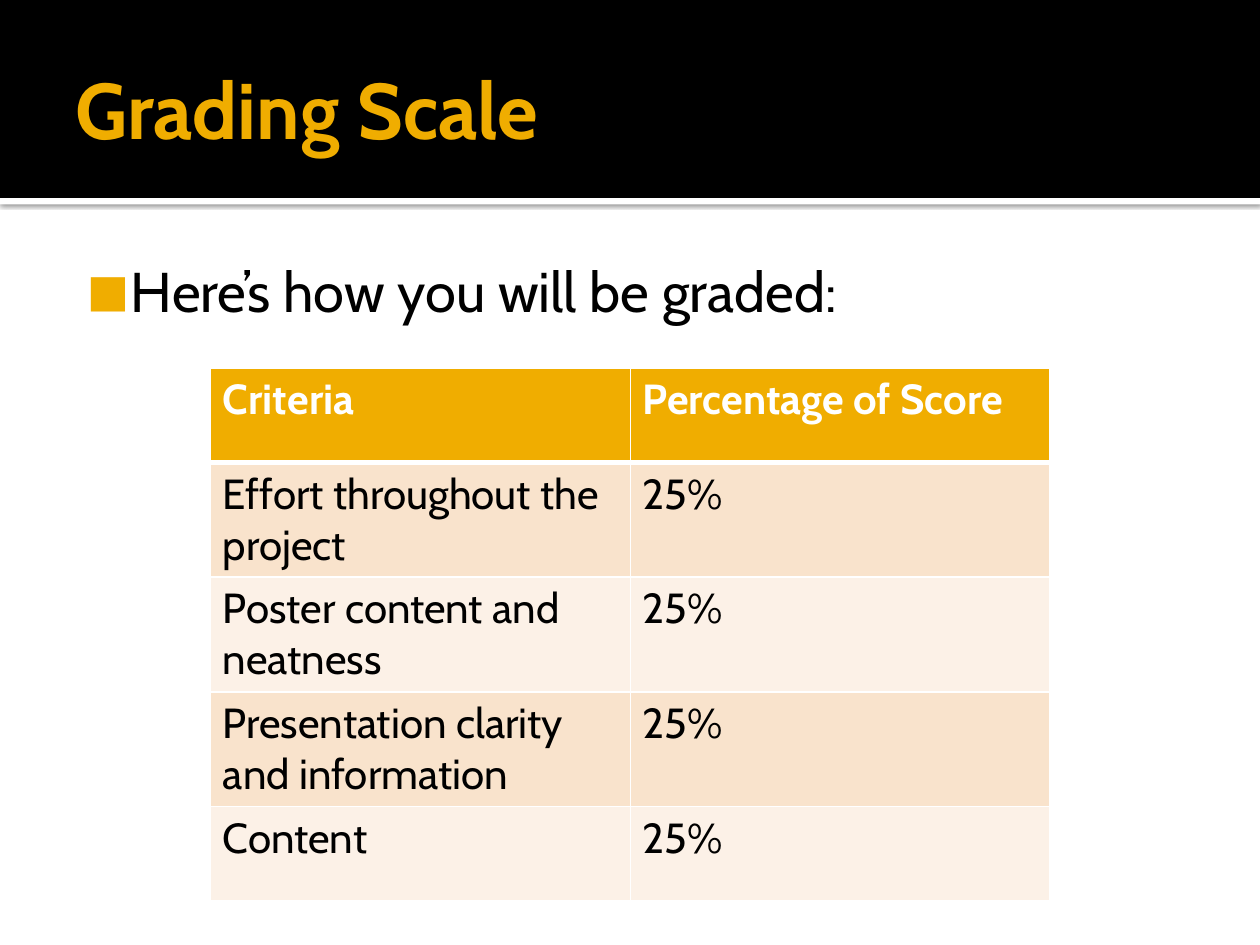
from dataclasses import dataclass

from lxml.etree import SubElement
from pptx import Presentation
from pptx.dml.color import RGBColor
from pptx.enum.shapes import MSO_SHAPE
from pptx.enum.text import MSO_ANCHOR, MSO_AUTO_SIZE, PP_ALIGN
from pptx.oxml import parse_xml
from pptx.oxml.ns import nsdecls, qn
from pptx.util import Cm, Pt


@dataclass(frozen=True)
class Theme:
    font: str = "Cabin"
    gold: str = "F0AD00"
    black: str = "000000"
    white: str = "FFFFFF"
    bands: tuple = ("F9E3CC", "FCF1E7")
    title_size: int = 45
    body_size: int = 32
    table_size: int = 24


theme = Theme()


def style_text(para, size, color, bold=False):
    para.font.name = theme.font
    para.font.size = Pt(size)
    para.font.bold = bold
    para.font.color.rgb = RGBColor.from_string(color)
    para.alignment = PP_ALIGN.LEFT


def add_border(cell, side, width):
    line = SubElement(cell._tc.get_or_add_tcPr(), qn(f"a:{side}"), w=str(Pt(width)))
    fill = SubElement(line, qn("a:solidFill"))
    SubElement(fill, qn("a:srgbClr"), val=theme.white)


deck = Presentation()
deck.slide_width, deck.slide_height = Cm(25.4), Cm(19.05)
page = deck.slides.add_slide(deck.slide_layouts[1])

# Header band and the white strip below it, behind the placeholders
header_height = Cm(3.99)
strip = page.shapes.add_shape(MSO_SHAPE.RECTANGLE, 0, header_height, deck.slide_width, Cm(0.13))
header = page.shapes.add_shape(MSO_SHAPE.RECTANGLE, 0, 0, deck.slide_width, header_height)
for position, (shape, color) in enumerate([(strip, theme.white), (header, theme.black)], start=2):
    shape.fill.solid()
    shape.fill.fore_color.rgb = RGBColor.from_string(color)
    shape.line.fill.background()
    shape.shadow.inherit = False
    page.shapes.element.insert(position, shape.element)

# Soft shadow under the strip
effects = strip.element.spPr.find(qn("a:effectLst"))
effects.append(parse_xml(
    f'<a:outerShdw {nsdecls("a")} blurRad="{Pt(2.5)}" dist="{Pt(0.8)}" dir="5400000" '
    f'algn="tl" rotWithShape="0"><a:srgbClr val="{theme.black}"><a:alpha val="60000"/>'
    '</a:srgbClr></a:outerShdw>'))

# Title
title = page.shapes.title
title.left, title.top, title.width, title.height = Cm(1.27), Cm(0.43), Cm(22.86), Cm(3.48)
frame = title.text_frame
frame.text = "Grading Scale"
frame.auto_size = MSO_AUTO_SIZE.NONE
frame.vertical_anchor = MSO_ANCHOR.MIDDLE
frame.margin_left, frame.margin_right = Cm(0.25), Cm(0.13)
style_text(frame.paragraphs[0], theme.title_size, theme.gold, bold=True)

# Bulleted introduction
body = page.placeholders[1]
body.left, body.top, body.width, body.height = Cm(1.27), Cm(4.93), Cm(22.86), Cm(12.85)
frame = body.text_frame
frame.text = "Here’s how you will be graded:"
frame.auto_size = MSO_AUTO_SIZE.NONE
frame.vertical_anchor = MSO_ANCHOR.TOP
frame.margin_left, frame.margin_top = Cm(0.15), Cm(0.25)
para = frame.paragraphs[0]
style_text(para, theme.body_size, theme.black)
para.space_before = Pt(0)
settings = para._p.get_or_add_pPr()
settings.set("marL", str(Cm(1.22)))
settings.set("indent", str(Cm(-0.89)))
bullet_color = SubElement(settings, qn("a:buClr"))
SubElement(bullet_color, qn("a:srgbClr"), val=theme.gold)
SubElement(settings, qn("a:buSzPct"), val="80000")
SubElement(settings, qn("a:buFont"), typeface=theme.font)
SubElement(settings, qn("a:buChar"), char="■")

# Grading table
grades = [
    ("Criteria", "Percentage of Score"),
    ("Effort throughout the project", "25%"),
    ("Poster content and neatness", "25%"),
    ("Presentation clarity and information", "25%"),
    ("Content", "25%"),
]
row_height = Cm(1.9)
table = page.shapes.add_table(
    len(grades), 2, Cm(4.24), Cm(7.42), Cm(16.93), row_height * len(grades)).table
for row, texts in enumerate(grades):
    table.rows[row].height = row_height
    is_header = row == 0
    fill_color = theme.gold if is_header else theme.bands[(row - 1) % 2]
    for column, text in enumerate(texts):
        cell = table.cell(row, column)
        cell.text = text
        style_text(cell.text_frame.paragraphs[0], theme.table_size,
                   theme.white if is_header else theme.black, bold=is_header)
        for side in ("lnL", "lnR", "lnT", "lnB"):
            thick = (is_header and side == "lnB") or (row == 1 and side == "lnT")
            add_border(cell, side, 3 if thick else 1)
        cell.fill.solid()
        cell.fill.fore_color.rgb = RGBColor.from_string(fill_color)

deck.save("out.pptx")
